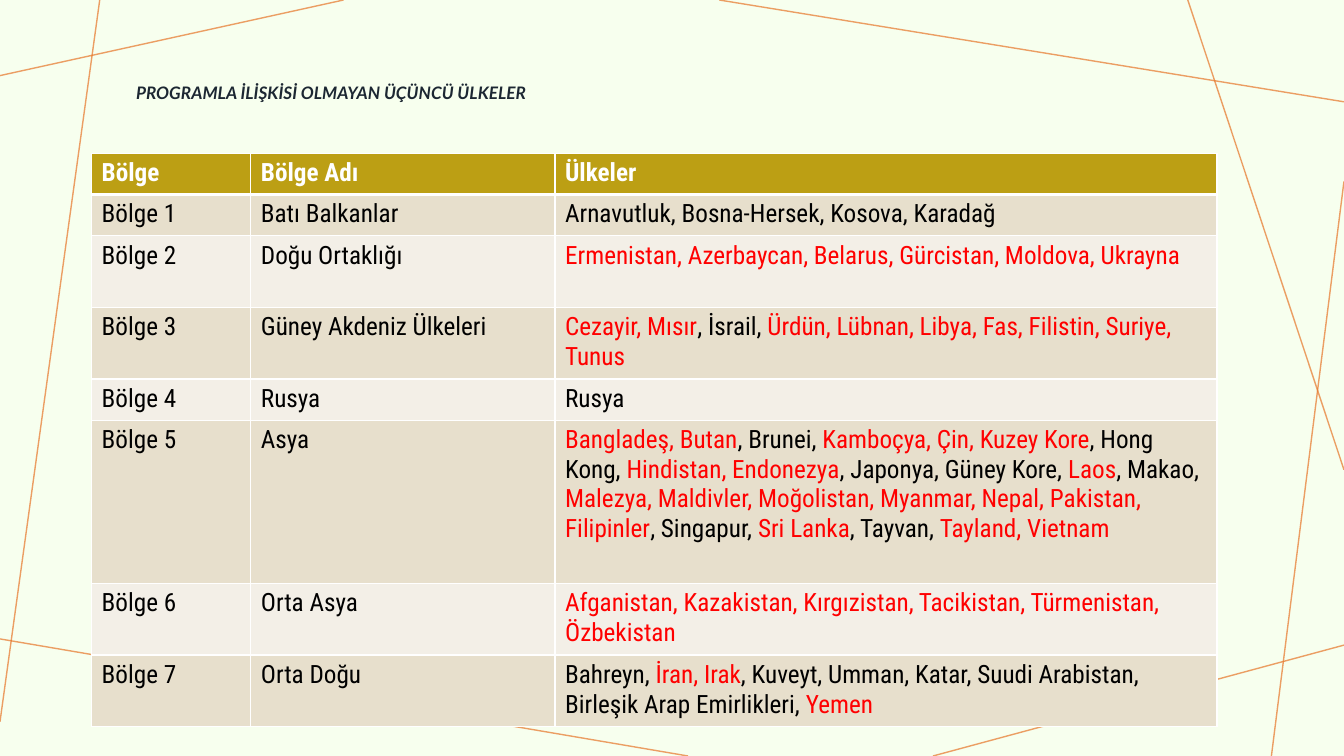
from lxml import etree
from pptx import Presentation, util as u
from pptx.dml.color import RGBColor
from pptx.enum import shapes, text
from pptx.oxml.ns import qn

COLORS = {
    "background": "F7FFEE", "line": "E77629", "title": "1C2732",
    "header": "BC9F14", "dark_band": "E7DFCC", "light_band": "F3EFE7",
    "white": "FFFFFF", "black": "000000", "red": "FF0000",
}
WIDTH, HEIGHT = 13.34, 7.5


def add_run(paragraph, words, font, size, color, bold=False, italic=False):
    run = paragraph.add_run()
    run.text = words
    run.font.name = font
    run.font.size = u.Pt(size)
    run.font.bold = bold
    run.font.italic = italic
    run.font.color.rgb = RGBColor.from_string(COLORS[color])


def add_border(cell, side, points):
    properties = cell._tc.get_or_add_tcPr()
    border = etree.SubElement(properties, qn(f"a:ln{side}"), w=str(u.Pt(points)))
    fill = etree.SubElement(border, qn("a:solidFill"))
    etree.SubElement(fill, qn("a:srgbClr"), val=COLORS["white"])


presentation = Presentation()
presentation.slide_width = u.Inches(WIDTH)
presentation.slide_height = u.Inches(HEIGHT)
slide = presentation.slides.add_slide(presentation.slide_layouts[5])
slide.background.fill.solid()
slide.background.fill.fore_color.rgb = RGBColor.from_string(COLORS["background"])

background_lines = [
    (3.41, 0, 0, 0.75),
    (0.99, 0, 0, 7.16),
    (6.83, HEIGHT, -0.05, 6.33),
    (WIDTH, 6.4, 9.26, HEIGHT),
    (WIDTH, 1.8, 12.62, HEIGHT),
    (WIDTH, 4.66, 11.79, 0),
    (WIDTH, 1.01, 7.14, 0),
]
for ends in background_lines:
    connector = slide.shapes.add_connector(
        shapes.MSO_CONNECTOR.STRAIGHT, *[u.Inches(value) for value in ends])
    connector.line.width = u.Pt(1)
    connector.line.color.rgb = RGBColor.from_string(COLORS["line"])
    color = connector.line._ln.find(".//" + qn("a:srgbClr"))
    etree.SubElement(color, qn("a:alpha"), val="70000")
    etree.SubElement(connector._element.spPr, qn("a:effectLst"))

title = slide.shapes.title
title.left, title.top = u.Inches(1.25), u.Inches(0.58)
title.width, title.height = u.Inches(10.83), u.Inches(0.71)
frame = title.text_frame
frame.auto_size = text.MSO_AUTO_SIZE.NONE
frame.word_wrap = True
frame.vertical_anchor = text.MSO_ANCHOR.MIDDLE
paragraph = frame.paragraphs[0]
paragraph.alignment = text.PP_ALIGN.LEFT
paragraph.line_spacing = 0.9
add_run(paragraph, "PROGRAMLA İLİŞKİSİ OLMAYAN ÜÇÜNCÜ ÜLKELER",
        "Lato", 12.3, "title", bold=True, italic=True)

# Asterisks enclose the countries set in red.
regions = [
    ("Batı Balkanlar", "Arnavutluk, Bosna-Hersek, Kosova, Karadağ"),
    ("Doğu Ortaklığı",
     "*Ermenistan, Azerbaycan, Belarus, Gürcistan, Moldova, Ukrayna*"),
    ("Güney Akdeniz Ülkeleri",
     "*Cezayir, Mısır*, İsrail, *Ürdün, Lübnan, Libya, Fas, Filistin, Suriye, Tunus*"),
    ("Rusya", "Rusya"),
    ("Asya",
     "*Bangladeş, Butan*, Brunei, *Kamboçya, Çin, Kuzey Kore*, Hong Kong, "
     "*Hindistan, Endonezya*, Japonya, Güney Kore, *Laos*, Makao, "
     "*Malezya, Maldivler, Moğolistan, Myanmar, Nepal, Pakistan, Filipinler*"
     ", Singapur, *Sri Lanka*, Tayvan, *Tayland, Vietnam*"),
    ("Orta Asya",
     "*Afganistan, Kazakistan, Kırgızistan, Tacikistan, Türmenistan, Özbekistan*"),
    ("Orta Doğu",
     "Bahreyn, *İran, Irak*, Kuveyt, Umman, Katar, Suudi Arabistan, "
     "Birleşik Arap Emirlikleri, *Yemen*"),
]
rows = [("Bölge", "Bölge Adı", "Ülkeler")]
rows += [(f"Bölge {number}", *region) for number, region in enumerate(regions, 1)]
column_widths = [1.58, 3.02, 6.57]
row_heights = [0.41, 0.41, 0.71, 0.71, 0.41, 1.62, 0.71, 0.71]

table = slide.shapes.add_table(
    len(rows), len(column_widths), u.Inches(0.91), u.Inches(1.52),
    u.Inches(sum(column_widths)), u.Inches(sum(row_heights))).table
for column, width in zip(table.columns, column_widths):
    column.width = u.Inches(width)

for row_index, (row, height) in enumerate(zip(rows, row_heights)):
    table.rows[row_index].height = u.Inches(height)
    is_header = row_index == 0
    band = "header" if is_header else ("light_band", "dark_band")[row_index % 2]
    for column_index, words in enumerate(row):
        cell = table.cell(row_index, column_index)
        add_border(cell, "L", 0.96)
        add_border(cell, "R", 0.96)
        add_border(cell, "T", 3 if row_index == 1 else 0.96)
        add_border(cell, "B", 3 if is_header else 0.96)
        cell.fill.solid()
        cell.fill.fore_color.rgb = RGBColor.from_string(COLORS[band])
        for part_index, part in enumerate(words.split("*")):
            if part:
                color = "white" if is_header else ("black", "red")[part_index % 2]
                add_run(cell.text_frame.paragraphs[0], part,
                        "Roboto Condensed", 18, color, bold=is_header)

presentation.save("out.pptx")
